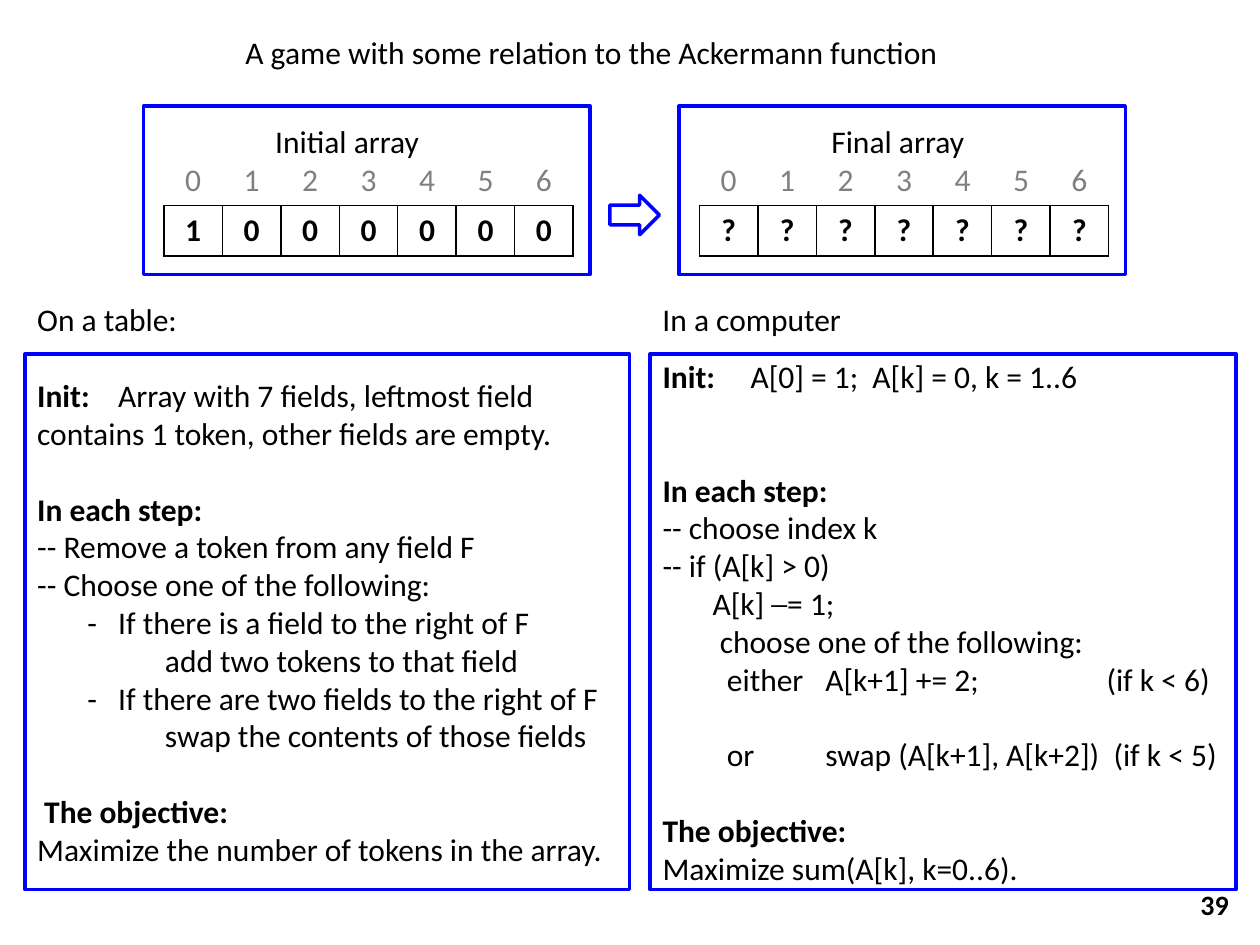
from lxml import etree
from pptx import Presentation
from pptx.dml.color import RGBColor
from pptx.enum.shapes import MSO_SHAPE
from pptx.enum.text import MSO_ANCHOR, PP_ALIGN
from pptx.oxml.ns import qn
from pptx.util import Pt

BLACK = RGBColor(0, 0, 0)
WHITE = RGBColor(255, 255, 255)
GREY = RGBColor(128, 128, 128)
BLUE = RGBColor(0, 0, 255)
RECT = MSO_SHAPE.RECTANGLE
ARROW = MSO_SHAPE.RIGHT_ARROW
LEFT, CENTER, RIGHT = PP_ALIGN.LEFT, PP_ALIGN.CENTER, PP_ALIGN.RIGHT
MIDDLE = MSO_ANCHOR.MIDDLE
FONT = "Calibri"
LINE = 21.6
CELL = 33.43
ROW = 28.8

TABLE_RULES = [
    (0, "Init:", "\tArray with 7 fields, leftmost field contains 1 token, other fields are empty.", [46.3]),
    (1, "In each step:", "", []),
    (0, "", "-- Remove a token from any field F", []),
    (0, "", "-- Choose one of the following:", []),
    (0, "", "\t-\tIf there is a field to the right of F", [28.6, 46.3]),
    (0, "", "\tadd two tokens to that field", [73]),
    (0, "", "\t-\tIf there are two fields to the right of F", [28.6, 46.3]),
    (0, "", "\tswap the contents of those fields", [73]),
    (1, "\tThe objective:", "", [4]),
    (0, "", "Maximize the number of tokens in the array.", []),
]
CODE_RULES = [
    (0, "Init:", "\tA[0] = 1;  A[k] = 0, k = 1..6", [50.3]),
    (2, "In each step:", "", []),
    (0, "", "-- choose index k", []),
    (0, "", "-- if (A[k] > 0)", []),
    (0, "", "\tA[k] ─= 1;", [28.6]),
    (0, "", "\tchoose one of the following:", [32.7]),
    (0, "", "\teither\tA[k+1] += 2;\t(if k < 6)", [36.8, 93, 253.7]),
    (1, "", "\tor\tswap (A[k+1], A[k+2])\t(if k < 5)", [36.8, 93, 257.7]),
    (1, "The objective:", "", []),
    (0, "", "Maximize sum(A[k], k=0..6).", []),
]


def style(para, size=18, color=BLACK, bold=False, align=LEFT):
    para.alignment = align
    font = para.font
    font.name, font.size, font.bold = FONT, Pt(size), bold
    font.color.rgb = color


def add_label(slide, text, x, y, w, **look):
    box = slide.shapes.add_textbox(Pt(x), Pt(y), Pt(w), Pt(ROW))
    frame = box.text_frame
    frame.word_wrap = look.get("align") == RIGHT
    frame.vertical_anchor = MIDDLE
    frame.text = text
    style(frame.paragraphs[0], **look)


def add_frame(slide, kind, x, y, w, h):
    shape = slide.shapes.add_shape(kind, Pt(x), Pt(y), Pt(w), Pt(h))
    shape.shadow.inherit = False
    shape.fill.background()
    shape.line.color.rgb = BLUE
    shape.line.width = Pt(2)
    return shape


def set_tabs(para, stops):
    tabs = etree.SubElement(para._p.get_or_add_pPr(), qn("a:tabLst"))
    for stop in stops:
        etree.SubElement(tabs, qn("a:tab"), pos=str(Pt(stop)), algn="l")


def add_rules(slide, x, w, rules):
    shape = add_frame(slide, RECT, x, 202.3, w, 306)
    shape.fill.solid()
    shape.fill.fore_color.rgb = WHITE
    frame = shape.text_frame
    frame.word_wrap = True
    frame.vertical_anchor = MIDDLE
    for i, (gap, lead, rest, stops) in enumerate(rules):
        para = frame.add_paragraph() if i else frame.paragraphs[0]
        if stops:
            set_tabs(para, stops)
        style(para)
        para.space_before = Pt(gap * LINE)
        for text, bold in ((lead, True), (rest, False)):
            if text:
                run = para.add_run()
                run.text = text
                run.font.bold = bold


def add_edges(cell, sides):
    props = cell._tc.get_or_add_tcPr()
    for side in sides:
        edge = etree.SubElement(props, qn("a:ln" + side), w=str(Pt(1)))
        fill = etree.SubElement(edge, qn("a:solidFill"))
        etree.SubElement(fill, qn("a:srgbClr"), val=str(BLACK))


def add_array(slide, title, values, x, left, width):
    count = len(values)
    table = slide.shapes.add_table(
        2, count, Pt(x + 11.5), Pt(88.6), Pt(CELL * count), Pt(2 * ROW)).table
    table.first_row = table.horz_banding = False
    for row in table.rows:
        row.height = Pt(ROW)
    for i, value in enumerate(values):
        table.columns[i].width = Pt(CELL)
        head, cell = table.cell(0, i), table.cell(1, i)
        head.text, cell.text = str(i), value
        add_edges(head, "B")
        add_edges(cell, "LRTB")
        head.fill.background()
        cell.fill.solid()
        cell.fill.fore_color.rgb = WHITE
        style(head.text_frame.paragraphs[0], color=GREY, align=CENTER)
        style(cell.text_frame.paragraphs[0], bold=True, align=CENTER)
    add_frame(slide, RECT, x, 60.5, 255, 96.5)
    add_label(slide, title, left, 66.4, width)


def main():
    deck = Presentation()
    deck.slide_width, deck.slide_height = Pt(720), Pt(540)
    slide = deck.slides.add_slide(deck.slide_layouts[6])
    add_label(slide, "A game with some relation to the Ackermann function", 133.2, 15.4, 414.7)
    add_array(slide, "Initial array", "1000000", 82.1, 150.2, 97.9)
    add_array(slide, "Final array", "???????", 388.1, 468, 91.4)
    add_frame(slide, ARROW, 348.5, 111.6, 28.3, 22.5)
    add_label(slide, "On a table:", 14.2, 168, 95.8)
    add_label(slide, "In a computer", 371.5, 168, 118.1)
    add_rules(slide, 14.2, 345.6, TABLE_RULES)
    add_rules(slide, 371.5, 334.8, CODE_RULES)
    add_label(slide, "39", 541.4, 502.6, 167.8, size=16, bold=True, align=RIGHT)
    deck.save("out.pptx")


if __name__ == "__main__":
    main()
